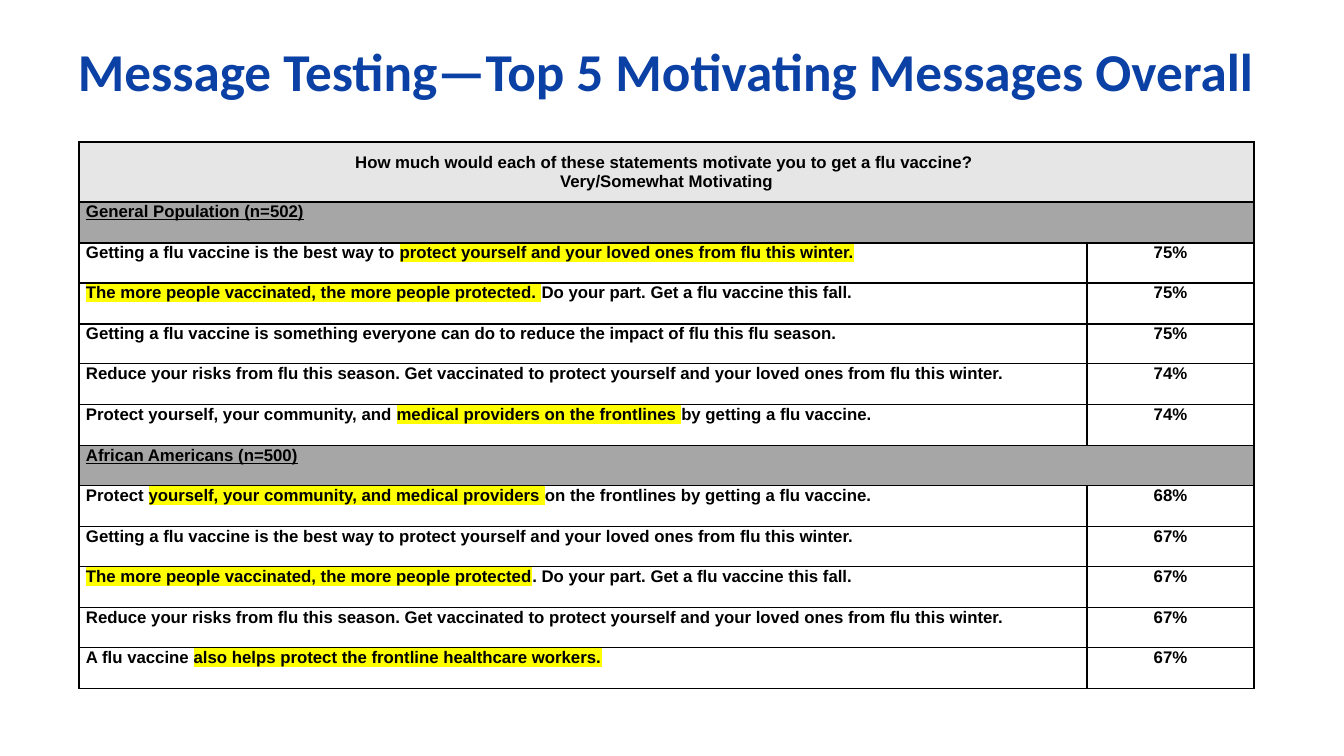
from dataclasses import dataclass

from lxml import etree
from pptx import Presentation
from pptx import util as u
from pptx.dml.color import RGBColor
from pptx.enum import text
from pptx.oxml import ns

TITLE = "Message Testing—Top 5 Motivating Messages Overall"
QUESTION = [
    "How much would each of these statements motivate you to get a flu vaccine? ",
    "Very/Somewhat Motivating",
]
REDUCE = ("Reduce your risks from flu this season. Get vaccinated to protect "
          "yourself and your loved ones from flu this winter.")

# Each message alternates plain and highlighted phrases, plain first.
GROUPS = [
    ("General Population (n=502)", [
        (["Getting a flu vaccine is the best way to ",
          "protect yourself and your loved ones from flu this winter."], "75%"),
        (["", "The more people vaccinated, the more people protected. ",
          "Do your part. Get a flu vaccine this fall."], "75%"),
        (["Getting a flu vaccine is something everyone can do to reduce "
          "the impact of flu this flu season."], "75%"),
        ([REDUCE], "74%"),
        (["Protect yourself, your community, and ",
          "medical providers on the frontlines ",
          "by getting a flu vaccine."], "74%"),
    ]),
    ("African Americans (n=500)", [
        (["Protect ", "yourself, your community, and medical providers ",
          "on the frontlines by getting a flu vaccine."], "68%"),
        (["Getting a flu vaccine is the best way to protect yourself "
          "and your loved ones from flu this winter."], "67%"),
        (["", "The more people vaccinated, the more people protected",
          ". Do your part. Get a flu vaccine this fall."], "67%"),
        ([REDUCE], "67%"),
        (["A flu vaccine ",
          "also helps protect the frontline healthcare workers."], "67%"),
    ]),
]


@dataclass(frozen=True)
class Theme:
    title: str = "0B40A5"
    ink: str = "000000"
    question: str = "E7E6E6"
    group: str = "A6A6A6"
    highlight: str = "FFFF00"
    title_font: str = "Calibri"
    table_font: str = "Arial"
    title_size: int = 38
    table_size: int = 12
    border: int = 1


T = Theme()
SLIDE = (1344, 756)
TITLE_BOX = (68, 30, 1210, 131)
TABLE_AT = (79, 142)
COLS = (1008, 167)
HEAD_H, BODY_H = 60, 487
INSET = 7
CENTER = text.PP_ALIGN.CENTER


def px(n):
    return u.Emu(round(n * 914400 / 100.8))


def add_run(p, words, font, size, color, underline=None, highlight=None):
    r = p.add_run()
    r.text = words
    r.font.size = u.Pt(size)
    r.font.bold = True
    r.font.underline = underline
    r.font.color.rgb = RGBColor.from_string(color)
    if highlight:
        mark = etree.SubElement(r.font._element, ns.qn("a:highlight"))
        etree.SubElement(mark, ns.qn("a:srgbClr"), val=highlight)
    r.font.name = font


def add_cell_run(p, words, **marks):
    add_run(p, words, T.table_font, T.table_size, T.ink, **marks)


def style_cell(cell):
    cell.margin_left = cell.margin_right = px(INSET)
    cell.margin_top = cell.margin_bottom = 0
    cell.fill.background()
    tc_pr = cell._tc.get_or_add_tcPr()
    for i, side in enumerate(("lnL", "lnR", "lnT", "lnB")):
        ln = etree.Element(ns.qn("a:" + side), w=str(u.Pt(T.border)))
        fill = etree.SubElement(ln, ns.qn("a:solidFill"))
        etree.SubElement(fill, ns.qn("a:srgbClr"), val=T.ink)
        tc_pr.insert(i, ln)


def span_row(table, row, color):
    cell = table.cell(row, 0)
    cell.merge(table.cell(row, 1))
    cell.fill.solid()
    cell.fill.fore_color.rgb = RGBColor.from_string(color)
    return cell


def add_title(s):
    tf = s.shapes.add_textbox(*map(px, TITLE_BOX)).text_frame
    tf.word_wrap = True
    tf.vertical_anchor = text.MSO_ANCHOR.TOP
    tf.margin_top = px(8)
    add_run(tf.paragraphs[0], TITLE, T.title_font, T.title_size, T.title)


def add_messages(s):
    body_rows = sum(1 + len(messages) for _, messages in GROUPS)
    edges = [round(i * BODY_H / body_rows) for i in range(body_rows + 1)]
    heights = [HEAD_H] + [b - a for a, b in zip(edges, edges[1:])]
    size = (sum(COLS), sum(heights))
    table = s.shapes.add_table(len(heights), len(COLS),
                               *map(px, TABLE_AT + size)).table
    table.first_row = table.horz_banding = False
    for col, width in zip(table.columns, COLS):
        col.width = px(width)
    for row, height in zip(table.rows, heights):
        row.height = px(height)
    for cell in table.iter_cells():
        style_cell(cell)

    head = span_row(table, 0, T.question)
    head.vertical_anchor = text.MSO_ANCHOR.MIDDLE
    tf = head.text_frame
    for i, line in enumerate(QUESTION):
        p = tf.add_paragraph() if i else tf.paragraphs[0]
        p.alignment = CENTER
        add_cell_run(p, line)

    row = 1
    for group, messages in GROUPS:
        p = span_row(table, row, T.group).text_frame.paragraphs[0]
        add_cell_run(p, group, underline=True)
        row += 1
        for phrases, share in messages:
            p = table.cell(row, 0).text_frame.paragraphs[0]
            for i, phrase in enumerate(phrases):
                if phrase:
                    add_cell_run(p, phrase, highlight=T.highlight if i % 2 else None)
            p = table.cell(row, 1).text_frame.paragraphs[0]
            p.alignment = CENTER
            add_cell_run(p, share)
            row += 1


def main():
    prs = Presentation()
    prs.slide_width, prs.slide_height = map(px, SLIDE)
    s = prs.slides.add_slide(prs.slide_layouts[6])
    add_messages(s)
    add_title(s)
    prs.save("out.pptx")


if __name__ == "__main__":
    main()
